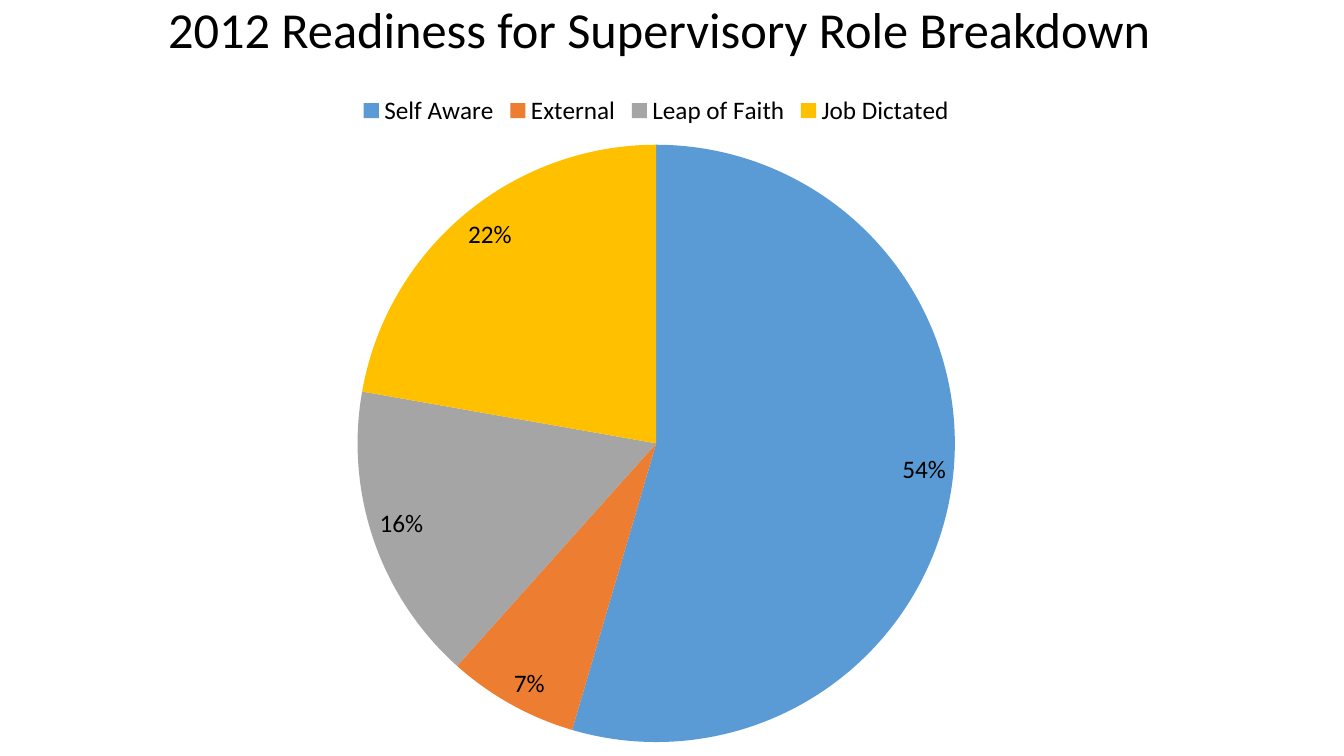
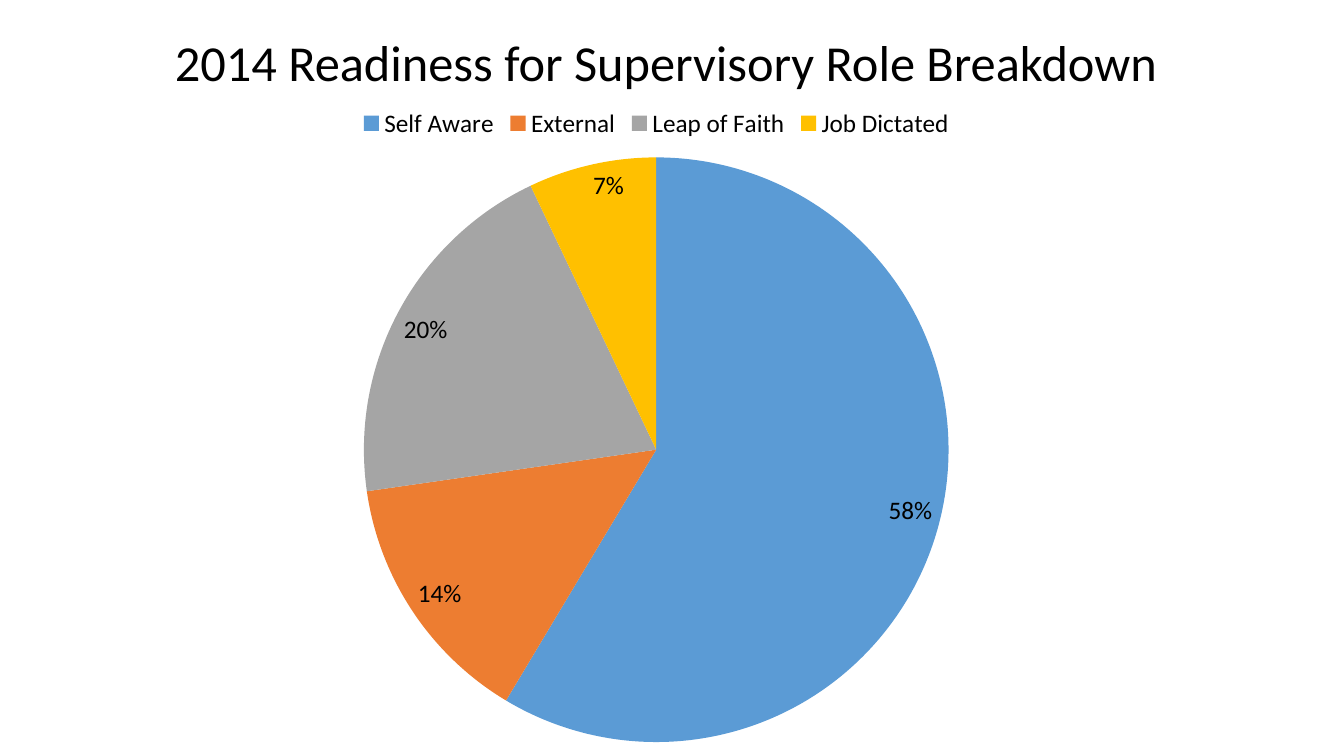
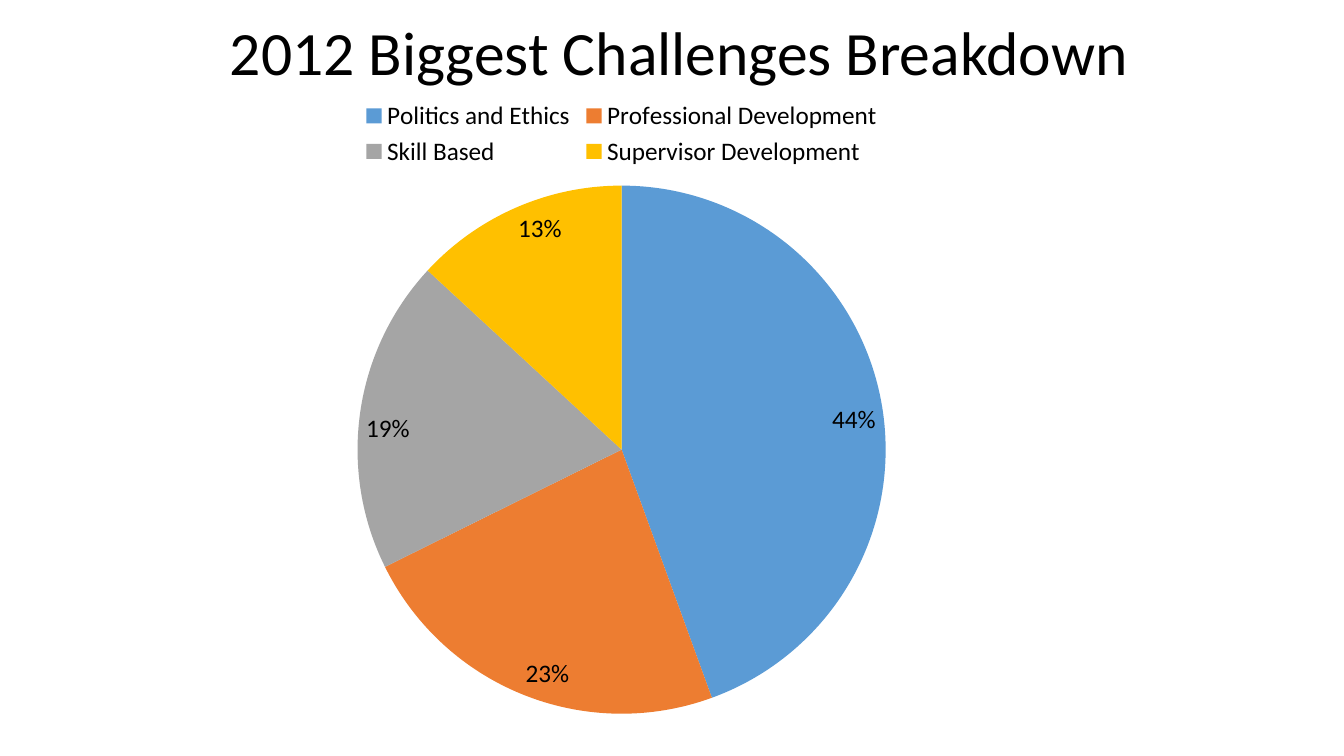
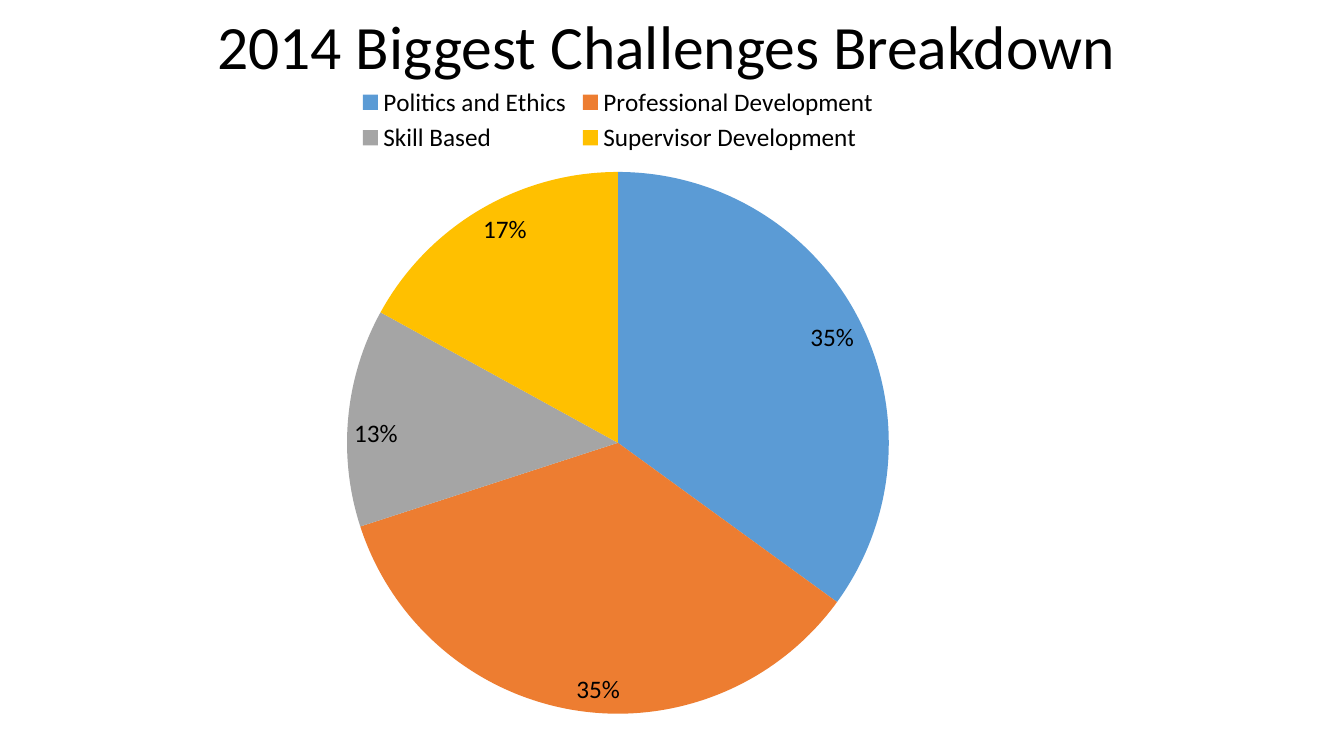
from dataclasses import dataclass

from pptx import Presentation
from pptx.chart.data import CategoryChartData as ChartData
from pptx.dml.color import RGBColor as Rgb
from pptx.enum.chart import XL_CHART_TYPE as Kind
from pptx.enum.chart import XL_LABEL_POSITION as Spot
from pptx.enum.chart import XL_LEGEND_POSITION as Side
from pptx.enum.text import MSO_ANCHOR as Anchor
from pptx.enum.text import PP_ALIGN as Align
from pptx.slide import Slide
from pptx.util import Emu, Pt

SCALE = 9525
WIDE, HIGH = 1280, 720


@dataclass(frozen=True)
class Theme:
    font: str = "Calibri"
    ink: str = "000000"
    paper: str = "FFFFFF"
    slices: tuple[str, ...] = ("5B9BD5", "ED7D31", "A5A5A5", "FFC000")
    small: int = 36
    large: int = 44
    label: int = 18
    lead: float = 0.9


@dataclass(frozen=True)
class Box:
    left: int
    top: int
    width: int
    height: int

    def emu(self) -> tuple[Emu, ...]:
        return tuple(px(side) for side in (self.left, self.top, self.width, self.height))


@dataclass(frozen=True)
class Page:
    title: str
    size: int
    head: Box
    frame: Box
    names: tuple[str, ...]
    shares: tuple[int, ...]


THEME = Theme()
READY = ("Self Aware", "External", "Leap of Faith", "Job Dictated")
TASKS = (
    "Politics and Ethics",
    "Professional Development",
    "Skill Based",
    "Supervisor Development",
)
PAGES = (
    Page(
        "2012 Readiness for Supervisory Role Breakdown ", THEME.small,
        Box(0, -3, 1267, 67), Box(72, 79, 1106, 641), READY, (54, 7, 16, 22),
    ),
    Page(
        "2014 Readiness for Supervisory Role Breakdown ", THEME.small,
        Box(0, 13, 1280, 98), Box(71, 91, 1108, 629), READY, (58, 14, 20, 7),
    ),
    Page(
        "2012 Biggest Challenges Breakdown", THEME.large,
        Box(95, 0, 1104, 105), Box(36, 84, 1112, 609), TASKS, (44, 23, 19, 13),
    ),
    Page(
        "2014 Biggest Challenges Breakdown", THEME.large,
        Box(83, 0, 1104, 94), Box(56, 71, 1065, 622), TASKS, (35, 35, 13, 17),
    ),
)


def px(count: int) -> Emu:
    return Emu(count * SCALE)


def color(code: str) -> Rgb:
    return Rgb.from_string(code)


def style(font, size: int, ink: str = THEME.ink) -> None:
    font.name = THEME.font
    font.size = Pt(size)
    font.color.rgb = color(ink)


def write(
    slide: Slide,
    text: str,
    *,
    box: Box,
    size: int,
    ink: str = THEME.ink,
    align: Align = Align.CENTER,
    anchor: Anchor = Anchor.MIDDLE,
) -> None:
    frame = slide.shapes.add_textbox(*box.emu()).text_frame
    frame.word_wrap = True
    frame.vertical_anchor = anchor
    line = frame.paragraphs[0]
    line.alignment = align
    line.line_spacing = THEME.lead
    run = line.add_run()
    run.text = text
    style(run.font, size, ink)


def draw_pie(slide: Slide, page: Page) -> None:
    data = ChartData()
    data.categories = page.names
    data.add_series("Series 1", page.shares)
    chart = slide.shapes.add_chart(Kind.PIE, *page.frame.emu(), data).chart
    style(chart.font, THEME.label)
    chart.has_title = False
    chart.has_legend = True
    chart.legend.position = Side.TOP
    chart.legend.include_in_layout = False

    plot = chart.plots[0]
    plot.vary_by_categories = True
    for index, code in enumerate(THEME.slices):
        shape = plot.series[0].points[index].format
        shape.fill.solid()
        shape.fill.fore_color.rgb = color(code)
        shape.line.fill.background()

    plot.has_data_labels = True
    labels = plot.data_labels
    labels.show_value = True
    labels.number_format = '0"%"'
    labels.number_format_is_linked = False
    labels.position = Spot.INSIDE_END
    style(labels.font, THEME.label)


def main() -> None:
    deck = Presentation()
    deck.slide_width, deck.slide_height = px(WIDE), px(HIGH)
    blank = deck.slide_layouts[6]
    for page in PAGES:
        slide = deck.slides.add_slide(blank)
        fill = slide.background.fill
        fill.solid()
        fill.fore_color.rgb = color(THEME.paper)
        write(slide, page.title, box=page.head, size=page.size)
        draw_pie(slide, page)
    deck.save("out.pptx")


if __name__ == "__main__":
    main()
